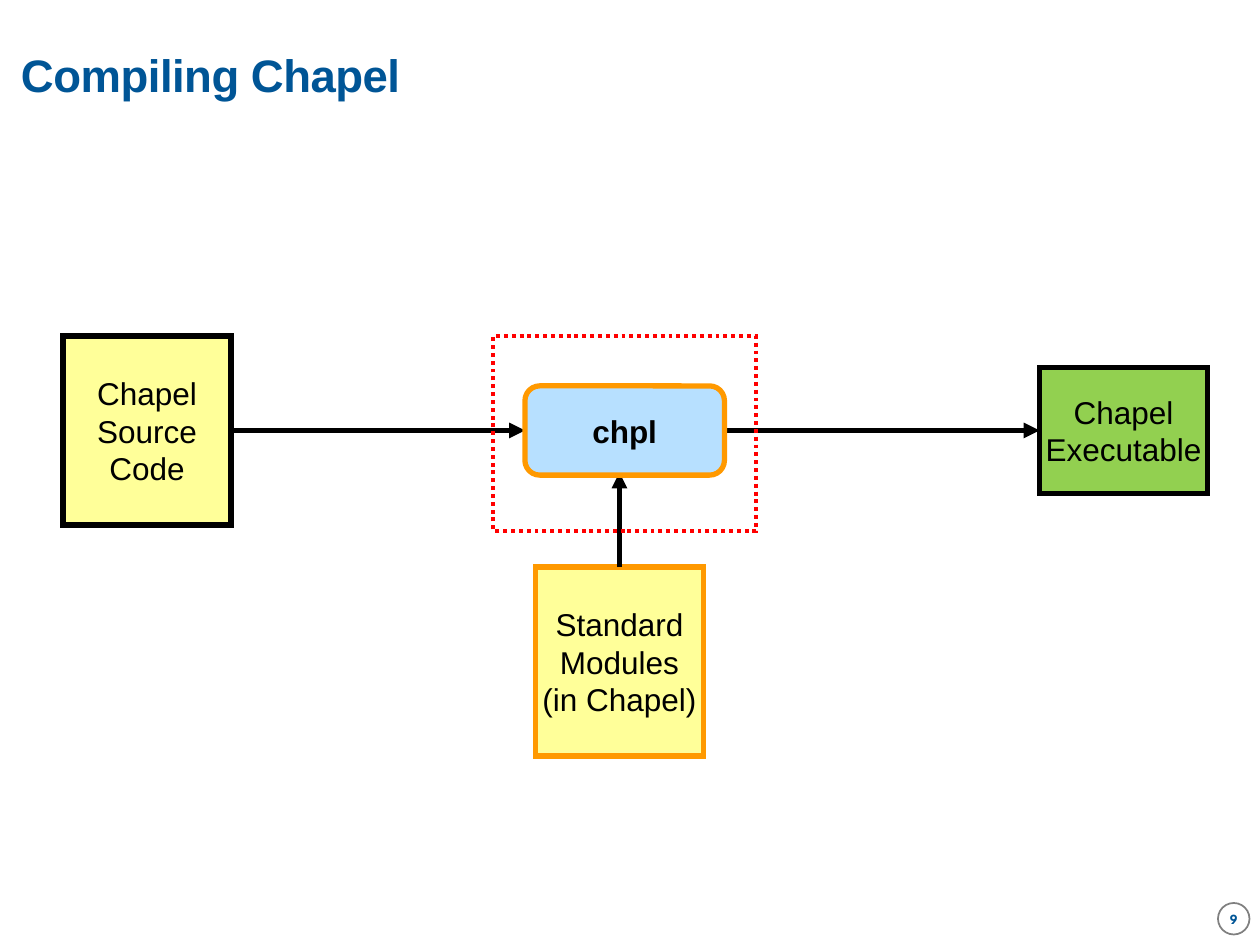
"""Build the Compiling Chapel slide: a compiler flow drawn on a grid."""
from dataclasses import dataclass
from typing import Optional

from lxml import etree
from pptx import Presentation
from pptx import util as u
from pptx.dml.color import RGBColor
from pptx.enum import dml, shapes, text
from pptx.oxml import ns

COLUMNS, ROWS = 120, 90
TOP, LEFT, BOTTOM, RIGHT = range(4)


@dataclass(frozen=True)
class Theme:
    """Colours, fonts and sizes in points."""
    ink: str = "000000"
    title: str = "005596"
    source: str = "FFFF99"
    executable: str = "92D050"
    compiler: str = "B7E0FF"
    accent: str = "FF9900"
    highlight: str = "FF0000"
    paper: str = "FFFFFF"
    badge: str = "808080"
    font: str = "Arial"
    badge_font: str = "League Spartan"
    title_size: float = 26
    label_size: float = 18
    badge_size: float = 8
    stroke: float = 3
    dotted_stroke: float = 2.25
    badge_stroke: float = 1


THEME = Theme()


@dataclass(frozen=True)
class Area:
    """A place on the grid in columns and rows."""
    column: float
    row: float
    width: float
    height: float


@dataclass(frozen=True)
class Style:
    """The font of a label."""
    size: float = THEME.label_size
    font: str = THEME.font
    colour: str = THEME.ink
    bold: bool = False


@dataclass(frozen=True)
class Box:
    """An outlined shape with an optional fill and label."""
    area: Area
    line: str
    fill: Optional[str] = None
    lines: tuple[str, ...] = ()
    kind: shapes.MSO_SHAPE = shapes.MSO_SHAPE.RECTANGLE
    stroke: float = THEME.stroke
    style: Style = Style()
    dotted: bool = False
    tight: bool = False


SOURCE = Box(Area(6, 32, 16, 18), THEME.ink, THEME.source, ("Chapel", "Source", "Code"))
EXECUTABLE = Box(Area(99, 35, 16, 12), THEME.ink, THEME.executable, ("Chapel", "Executable"))
MODULES = Box(Area(51, 54, 16, 18), THEME.accent, THEME.source,
              ("Standard", "Modules", "(in Chapel)"))
COMPILER = Box(Area(50, 36.75, 19, 8.5), THEME.accent, THEME.compiler, ("chpl",),
               shapes.MSO_SHAPE.ROUNDED_RECTANGLE, style=Style(bold=True))
HIGHLIGHT = Box(Area(47, 32, 25, 18.6), THEME.highlight,
                stroke=THEME.dotted_stroke, dotted=True)
BADGE = Box(Area(116, 86, 3, 3), THEME.badge, THEME.paper, ("9",), shapes.MSO_SHAPE.OVAL,
            THEME.badge_stroke,
            Style(THEME.badge_size, THEME.badge_font, THEME.title, True), tight=True)


def across(columns: float) -> int:
    """Turn grid columns into a length."""
    return u.Inches(10 * columns / COLUMNS)


def down(rows: float) -> int:
    """Turn grid rows into a length."""
    return u.Inches(7.5 * rows / ROWS)


def place(area: Area) -> tuple[int, int, int, int]:
    """Give left, top, width and height of an area."""
    return across(area.column), down(area.row), across(area.width), down(area.height)


def add_run(paragraph, words: str, style: Style):
    """Add one formatted run to a paragraph."""
    run = paragraph.add_run()
    run.text = words
    run.font.name, run.font.size, run.font.bold = style.font, u.Pt(style.size), style.bold
    run.font.color.rgb = RGBColor.from_string(style.colour)
    return run


def clear_margins(frame) -> None:
    """Remove the insets of a text frame."""
    frame.margin_left = frame.margin_right = frame.margin_top = frame.margin_bottom = 0


def set_line(line, colour: str, width: float) -> None:
    """Colour and size an outline."""
    line.color.rgb = RGBColor.from_string(colour)
    line.width = u.Pt(width)


def add_title(slide, words: str) -> None:
    """Fill and format the title placeholder."""
    title = slide.shapes.title
    title.left, title.top, title.width, title.height = place(Area(2, 2, 96, 11))
    frame = title.text_frame
    clear_margins(frame)
    frame.word_wrap, frame.auto_size = True, text.MSO_AUTO_SIZE.NONE
    frame.vertical_anchor = text.MSO_ANCHOR.MIDDLE
    paragraph = frame.paragraphs[0]
    paragraph.alignment, paragraph.line_spacing = text.PP_ALIGN.LEFT, 0.85
    run = add_run(paragraph, words, Style(THEME.title_size, colour=THEME.title, bold=True))
    run.font._element.set("spc", "-30")


def add_box(slide, box: Box):
    """Draw a box with its label."""
    shape = slide.shapes.add_shape(box.kind, *place(box.area))
    shape.shadow.inherit = False
    if box.fill:
        shape.fill.solid()
        shape.fill.fore_color.rgb = RGBColor.from_string(box.fill)
    else:
        shape.fill.background()
    set_line(shape.line, box.line, box.stroke)
    if box.dotted:
        shape.line.dash_style = dml.MSO_LINE.ROUND_DOT
    if box.kind == shapes.MSO_SHAPE.RECTANGLE:
        outline = shape.element.spPr.find(ns.qn("a:ln"))
        etree.SubElement(outline, ns.qn("a:miter"), lim="800000")
    frame = shape.text_frame
    frame.word_wrap = box.tight
    frame.vertical_anchor = text.MSO_ANCHOR.MIDDLE
    if box.tight:
        clear_margins(frame)
    for index, words in enumerate(box.lines):
        paragraph = frame.add_paragraph() if index else frame.paragraphs[0]
        paragraph.alignment = text.PP_ALIGN.CENTER
        add_run(paragraph, words, box.style)
    return shape


def add_arrow(slide, start: tuple[float, float], end: tuple[float, float]):
    """Draw an arrow between two grid points."""
    arrow = slide.shapes.add_connector(
        shapes.MSO_CONNECTOR.STRAIGHT,
        across(start[0]), down(start[1]), across(end[0]), down(end[1]))
    set_line(arrow.line, THEME.ink, THEME.stroke)
    properties = arrow.element.spPr
    etree.SubElement(properties.find(ns.qn("a:ln")), ns.qn("a:tailEnd"), type="triangle")
    etree.SubElement(properties, ns.qn("a:effectLst"))
    return arrow


def main() -> None:
    """Assemble and save the slide."""
    presentation = Presentation()
    presentation.slide_width, presentation.slide_height = u.Inches(10), u.Inches(7.5)
    slide = presentation.slides.add_slide(presentation.slide_layouts[5])
    add_title(slide, "Compiling Chapel")
    source, executable, modules, compiler = (
        add_box(slide, box) for box in (SOURCE, EXECUTABLE, MODULES, COMPILER))
    for start, end in ((source, compiler), (compiler, executable)):
        arrow = add_arrow(slide, (22, 41), (50, 41))
        arrow.begin_connect(start, RIGHT)
        arrow.end_connect(end, LEFT)
    add_arrow(slide, (59, 54), (59, 45)).begin_connect(modules, TOP)
    compiler.element.getparent().append(compiler.element)
    for box in (HIGHLIGHT, BADGE):
        add_box(slide, box)
    presentation.save("out.pptx")


if __name__ == "__main__":
    main()
